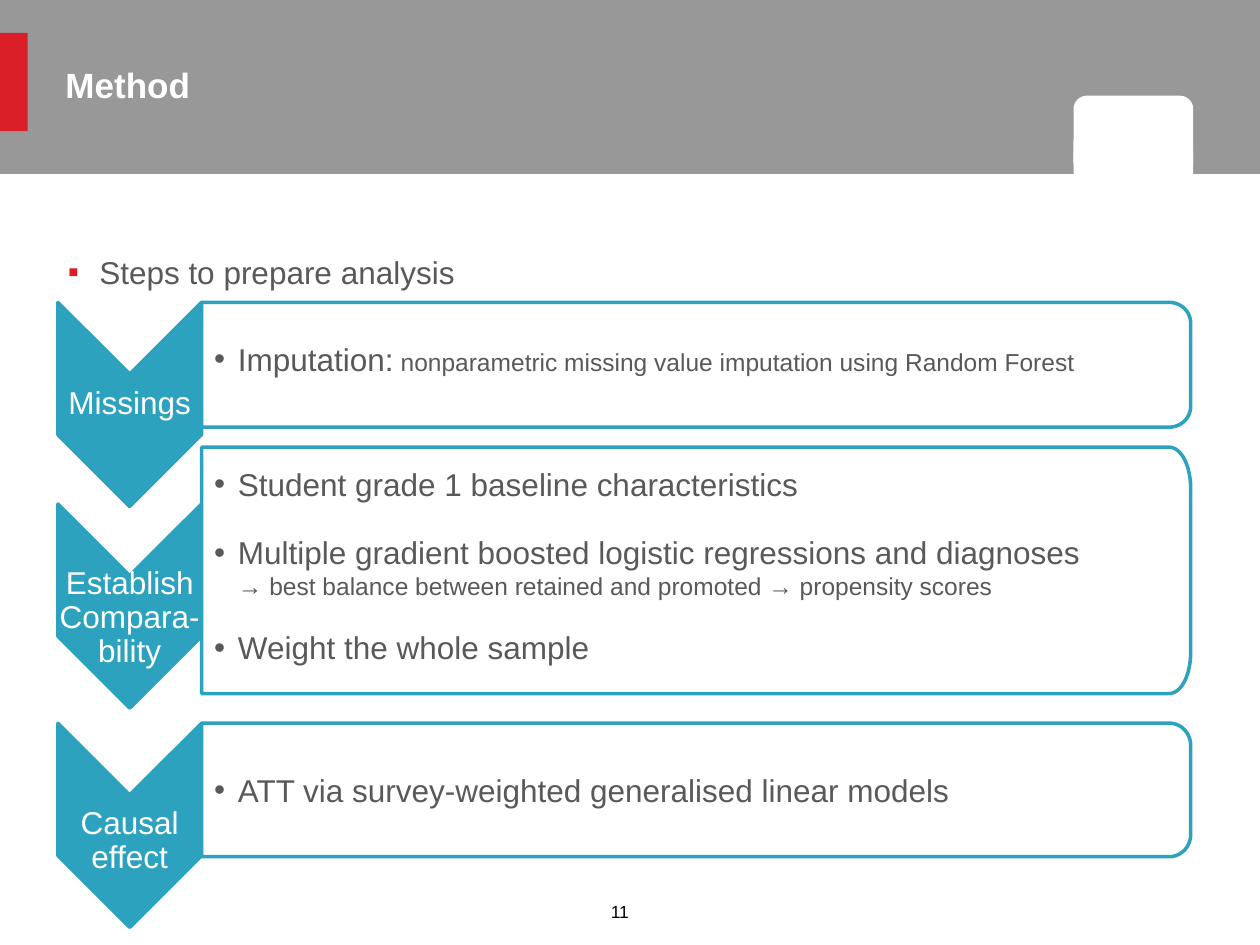
import math
from dataclasses import dataclass

import pptx
import pptx.dml.color
import pptx.enum.shapes
import pptx.enum.text
import pptx.oxml
import pptx.oxml.ns
import pptx.util

Pt = pptx.util.Pt
Inches = pptx.util.Inches
Shape = pptx.enum.shapes.MSO_SHAPE
Align = pptx.enum.text.PP_ALIGN
Anchor = pptx.enum.text.MSO_ANCHOR


@dataclass(frozen=True)
class Theme:
    font: str = "Arial"
    white: str = "FFFFFF"
    black: str = "000000"
    gray: str = "7F7F7F"
    red: str = "DA1F28"
    teal: str = "2DA2BF"
    ink: str = "595959"
    title: float = 20
    body: float = 18
    note: float = 14
    page: float = 10
    line: float = 2


@dataclass(frozen=True)
class Item:
    """One bullet: a head, a smaller tail, and the gap above in points."""
    head: str
    tail: str = ""
    split: bool = False
    gap: float = 0


@dataclass(frozen=True)
class Step:
    """One row; tops and heights are percent of the slide's height."""
    label: str
    arrow: float
    panel: float
    high: float
    text: float
    items: tuple
    drop: float = 0  # lines by which the label sits below the middle


@dataclass(frozen=True)
class Box:
    """Percent of the slide's width and height."""
    left: float
    top: float
    wide: float
    high: float

    def place(self) -> tuple:
        return (*spot(self.left, self.top), *spot(self.wide, self.high))


THEME = Theme()
WIDE, HIGH = Inches(10), Inches(7.5)
ARROW = Box(4.6, 0, 11.4, 21.6)
PANEL = Box(16, 0, 78.5, 0)

STEPS = (
    Step("Missings", 32, 32, 13.2, 35.33, (
        Item("Imputation:",
             " nonparametric missing value imputation using Random Forest"),)),
    Step("Establish Compara-bility", 53.33, 47.33, 26.07, 48.53, (
        Item("Student grade 1 baseline characteristics"),
        Item("Multiple gradient boosted logistic regressions and diagnoses",
             "→ best balance between retained and promoted → propensity scores",
             split=True, gap=17.5),
        Item("Weight the whole sample", gap=16)), drop=0.8),
    Step("Causal effect", 76.53, 76.53, 14.13, 80.93, (
        Item("ATT via survey-weighted generalised linear models"),), drop=1),
)


def spot(x: float, y: float) -> tuple:
    return round(WIDE * x / 100), round(HIGH * y / 100)


def rgb(tone: str):
    return pptx.dml.color.RGBColor.from_string(tone)


def element(tag: str, **attrs):
    node = pptx.oxml.parse_xml(f"<a:{tag} {pptx.oxml.ns.nsdecls('a')}/>")
    for key, value in attrs.items():
        node.set(key, str(value))
    return node


def paint(shape, tone: str, alpha: int = 100, line: str = "") -> None:
    shape.shadow.inherit = False
    shape.fill.solid()
    shape.fill.fore_color.rgb = rgb(tone)
    if alpha < 100:
        color = shape.fill._xPr.find(".//" + pptx.oxml.ns.qn("a:srgbClr"))
        color.append(element("alpha", val=alpha * 1000))
    if line:
        shape.line.color.rgb = rgb(line)
        shape.line.width = Pt(THEME.line)
        shape.line._get_or_add_ln().append(element("round"))
    else:
        shape.line.fill.background()


def block(slide, box: Box, tone: str, kind=Shape.RECTANGLE, alpha: int = 100) -> None:
    paint(slide.shapes.add_shape(kind, *box.place()), tone, alpha)


def style(para, size: float, tone: str, bold: bool = False) -> None:
    para.font.name = THEME.font
    para.font.size = Pt(size)
    para.font.bold = bold
    para.font.color.rgb = rgb(tone)


def bullet(para, mark: str, indent: float, tone: str) -> None:
    props = para._p.get_or_add_pPr()
    props.set("marL", str(Inches(indent)))
    props.set("indent", str(-Inches(indent)))
    color = element("buClr")
    color.append(element("srgbClr", val=tone))
    props.extend([color, element("buFont", typeface=THEME.font),
                  element("buChar", char=mark)])


def frame(slide, box: Box):
    text = slide.shapes.add_textbox(*box.place()).text_frame
    text.word_wrap = True
    return text


def outline(slide, points: list):
    pen = slide.shapes.build_freeform(*points[0])
    pen.add_line_segments(points[1:], close=True)
    return pen.convert_to_shape()


def chevron(slide, step: Step) -> None:
    x, y, w, h = Box(ARROW.left, step.arrow, ARROW.wide, ARROW.high).place()
    half = w // 2
    shape = outline(slide, [(x + w, y), (x + w, y + h - half), (x + half, y + h),
                            (x, y + h - half), (x, y), (x + half, y + half)])
    paint(shape, THEME.teal, line=THEME.teal)
    text = shape.text_frame
    text.word_wrap = True
    text.vertical_anchor = Anchor.MIDDLE
    text.margin_left = text.margin_right = Inches(0.01)
    text.margin_top = Pt(step.drop * THEME.body)
    text.margin_bottom = 0
    para = text.paragraphs[0]
    para.text = step.label
    para.alignment = Align.CENTER
    para.line_spacing = 0.9
    style(para, THEME.body, THEME.white)


def panel(slide, step: Step) -> None:
    """Box whose right corners are arcs a sixth of its height tall."""
    x, y, w, h = Box(PANEL.left, step.panel, PANEL.wide, step.high).place()
    rx, ry = Inches(0.17), h / 6
    turns = [math.radians(a) for a in range(0, 91, 6)]
    arc = [(round(x + w - rx + rx * math.sin(t)), ry * (1 - math.cos(t)))
           for t in turns]
    upper = [(px, round(y + dy)) for px, dy in arc]
    lower = [(px, round(y + h - dy)) for px, dy in reversed(arc)]
    shape = outline(slide, [(x, y), *upper, *lower, (x, y + h)])
    paint(shape, THEME.white, 90, THEME.teal)


def points(slide, step: Step) -> None:
    text = frame(slide, Box(PANEL.left, step.text, PANEL.wide, 5.33))
    for i, item in enumerate(step.items):
        para = text.add_paragraph() if i else text.paragraphs[0]
        bullet(para, "•", 0.19, THEME.ink)
        style(para, THEME.body, THEME.ink)
        if item.gap:
            para.space_before = Pt(item.gap)
        para.add_run().text = item.head
        if item.split:
            para.add_line_break()
        if item.tail:
            run = para.add_run()
            run.text = item.tail
            run.font.size = Pt(THEME.note)


def label(slide, box: Box, words: str, size: float, tone: str,
          bold: bool = False, inset: bool = True, mark: str = "") -> None:
    text = frame(slide, box)
    if not inset:
        text.margin_left = text.margin_right = text.margin_top = text.margin_bottom = 0
    para = text.paragraphs[0]
    para.text = words
    if mark:
        bullet(para, mark, 0.25, THEME.red)
    style(para, size, tone, bold)


def main() -> None:
    deck = pptx.Presentation()
    deck.slide_width, deck.slide_height = WIDE, HIGH
    slide = deck.slides.add_slide(deck.slide_layouts[6])
    block(slide, Box(0, 0, 100, 18.4), THEME.gray, alpha=80)
    block(slide, Box(0, 3.47, 2.2, 10.4), THEME.red)
    block(slide, Box(85.2, 10.13, 9.5, 8.4), THEME.white, Shape.ROUNDED_RECTANGLE)
    block(slide, Box(85.2, 16, 9.5, 2.53), THEME.white)
    label(slide, Box(47.5, 94.67, 5, 3.6), "11", THEME.page, THEME.black)
    label(slide, Box(5.2, 6.67, 83.4, 12.13), "Method", THEME.title, THEME.white,
          bold=True, inset=False)
    label(slide, Box(4.4, 26.13, 33, 5.33), "Steps to prepare analysis",
          THEME.body, THEME.ink, mark="▪")
    for step in STEPS:
        chevron(slide, step)
        panel(slide, step)
        points(slide, step)
    deck.save("out.pptx")


if __name__ == "__main__":
    main()
